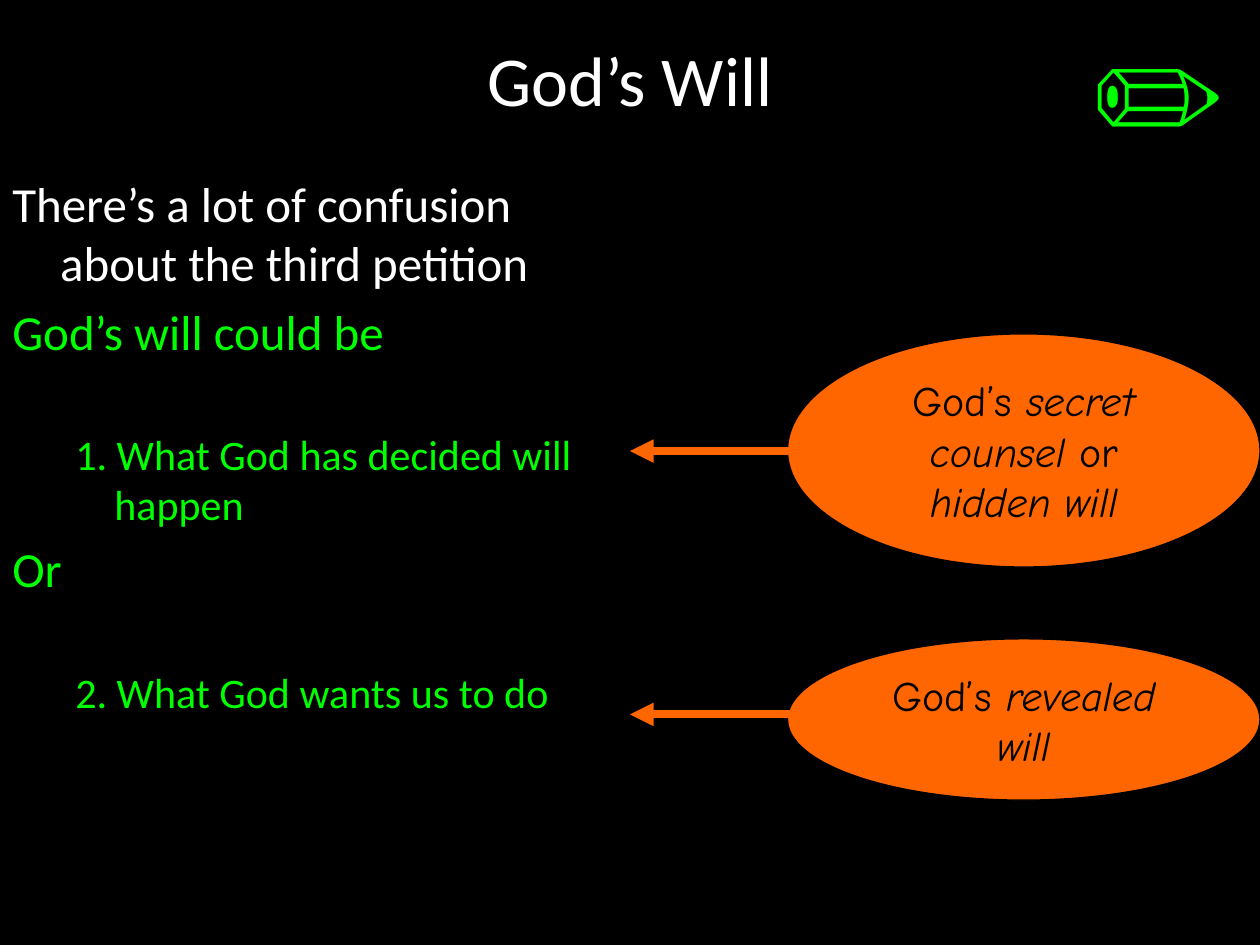
import pptx
import pptx.util
import pptx.dml.color
import pptx.enum.shapes
import pptx.enum.text
import pptx.oxml
import pptx.oxml.ns
from dataclasses import dataclass
from typing import NamedTuple

Inches = pptx.util.Inches
Pt = pptx.util.Pt
RGB = pptx.dml.color.RGBColor.from_string
Align = pptx.enum.text.PP_ALIGN
Anchor = pptx.enum.text.MSO_ANCHOR


@dataclass(frozen=True)
class Theme:
    back: str = "000000"
    white: str = "FFFFFF"
    green: str = "00FF00"
    orange: str = "FF6600"
    body_font: str = "Calibri"
    note_font: str = "Comic Neue"
    symbol_font: str = "Times New Roman"
    title_size: int = 40
    main_size: int = 28
    sub_size: int = 24
    symbol_size: int = 80


class Run(NamedTuple):
    text: str
    italic: bool = False


class Point(NamedTuple):
    text: str
    color: str
    level: int = 0


class Callout(NamedTuple):
    top: float
    height: float
    arrow_y: float
    runs: list[Run]


T = Theme()
POINTS = [
    Point("There’s a lot of confusion about the third petition", T.white),
    Point("God’s will could be", T.green),
    Point("1. What God has decided will happen", T.green, 1),
    Point("Or", T.green),
    Point("2. What God wants us to do", T.green, 1),
]
CALLOUTS = [
    Callout(5.07, 1.28, 5.67, [Run("God’s "), Run("revealed will", True)]),
    Callout(2.65, 1.85, 3.58, [Run("God’s "), Run("secret counsel ", True),
                               Run("or "), Run("hidden will", True)]),
]
# Per outline level: type size, left margin, first-line indent, space before
LEVELS = [(T.main_size, 0.38, -0.38, 5.6), (T.sub_size, 0.81, -0.31, 39)]


def add_run(p, text: str, size: float, font: str, color: str, italic: bool = False) -> None:
    r = p.add_run()
    r.text = text
    for name, value in {"size": Pt(size), "name": font, "italic": italic}.items():
        setattr(r.font, name, value)
    r.font.color.rgb = RGB(color)


def add_box(s, left: float, top: float, width: float, height: float, anchor):
    sp = s.shapes.add_textbox(Inches(left), Inches(top), Inches(width), Inches(height))
    tf = sp.text_frame
    tf.word_wrap = True
    tf.vertical_anchor = anchor
    return tf


def add_label(s, at: tuple, text: str, size: float, font: str, color: str) -> None:
    p = add_box(s, *at, Anchor.MIDDLE).paragraphs[0]
    p.alignment = Align.CENTER
    add_run(p, text, size, font, color)


def add_points(s, points: list[Point]) -> None:
    tf = add_box(s, 0, 1.33, 5, 6.17, Anchor.TOP)
    for i, point in enumerate(points):
        p = tf.add_paragraph() if i else tf.paragraphs[0]
        size, margin, indent, before = LEVELS[point.level]
        p.level = point.level
        p.space_before = Pt(before)
        pPr = p._p.get_or_add_pPr()
        for name, value in {"marL": margin, "indent": indent}.items():
            pPr.set(name, str(Inches(value)))
        add_run(p, point.text, size, T.body_font, point.color)


def add_ellipse(s, c: Callout) -> None:
    sp = s.shapes.add_shape(pptx.enum.shapes.MSO_SHAPE.OVAL, Inches(6.25), Inches(c.top),
                            Inches(3.75), Inches(c.height))
    sp.shadow.inherit = False
    sp.fill.solid()
    sp.fill.fore_color.rgb = RGB(T.orange)
    sp.line.color.rgb = RGB(T.back)
    sp.line.width = Pt(0.75)
    tf = sp.text_frame
    tf.word_wrap = True
    tf.vertical_anchor = Anchor.MIDDLE
    p = tf.paragraphs[0]
    p.alignment = Align.CENTER
    for run in c.runs:
        add_run(p, run.text, T.sub_size, T.note_font, T.back, run.italic)


def add_arrow(s, y: float) -> None:
    line = s.shapes.add_connector(pptx.enum.shapes.MSO_CONNECTOR.STRAIGHT,
                                  Inches(6.33), Inches(y), Inches(5), Inches(y))
    line.line.color.rgb = RGB(T.orange)
    line.line.width = Pt(4.5)
    qn, element = pptx.oxml.ns.qn, pptx.oxml.parse_xml
    ns = pptx.oxml.ns.nsdecls("a")
    spPr = line._element.spPr
    spPr.find(qn("a:ln")).append(element(f'<a:tailEnd {ns} type="triangle"/>'))
    spPr.append(element(f"<a:effectLst {ns}/>"))


def main() -> None:
    prs = pptx.Presentation()
    prs.slide_width, prs.slide_height = Inches(10), Inches(7.5)
    s = prs.slides.add_slide(prs.slide_layouts[6])
    s.background.fill.solid()
    s.background.fill.fore_color.rgb = RGB(T.back)

    # Title and outline
    add_label(s, (0, 0, 10, 1.25), "God’s Will", T.title_size, T.body_font, T.white)
    add_points(s, POINTS)

    # Callouts, with the arrows above the ellipses
    for c in CALLOUTS:
        add_ellipse(s, c)
    for c in CALLOUTS:
        add_arrow(s, c.arrow_y)

    # Pencil symbol
    add_label(s, (8.41, 0, 1.58, 1.43), "✏", T.symbol_size, T.symbol_font, T.green)

    prs.save("out.pptx")


if __name__ == "__main__":
    main()
